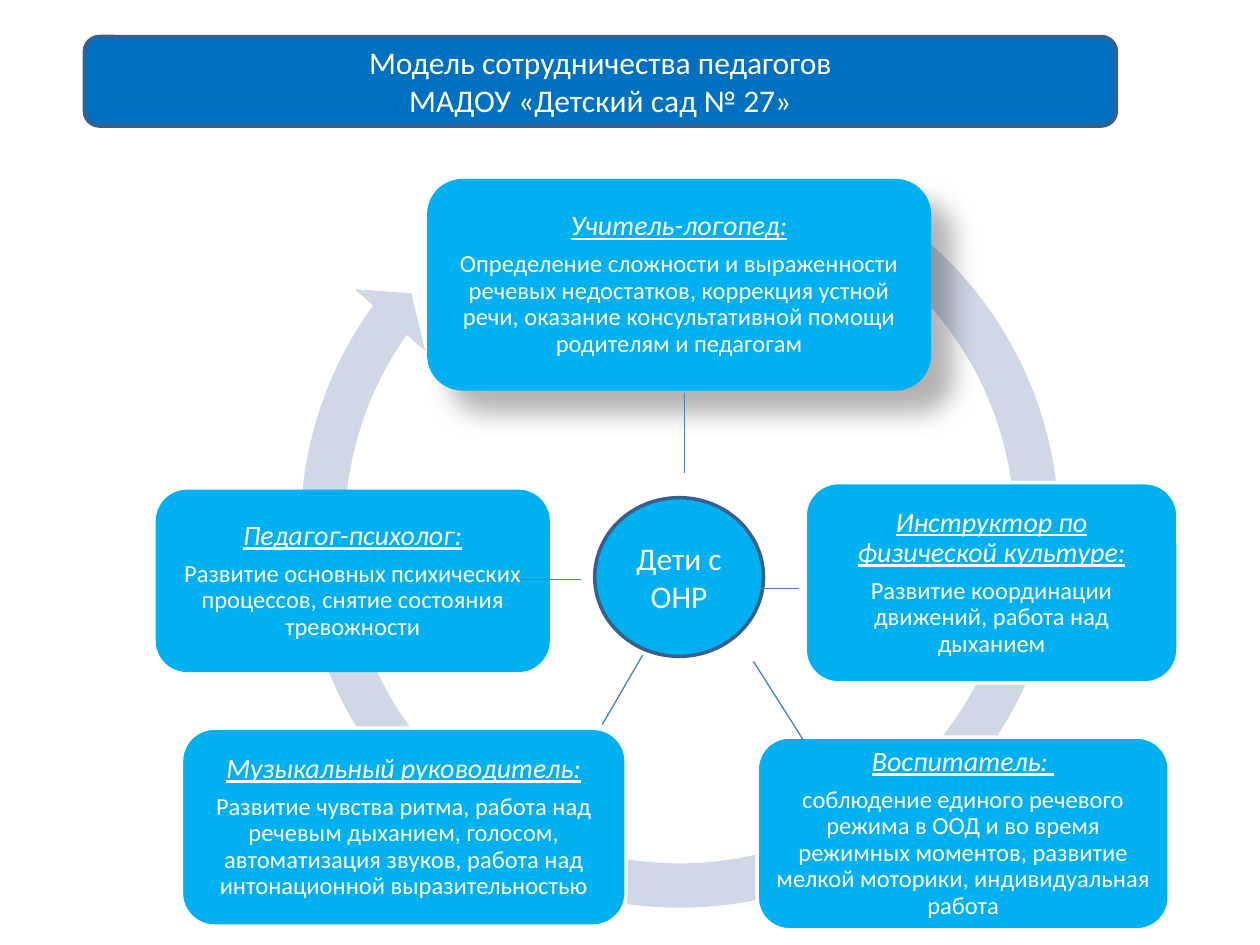
"""Build a slide showing how kindergarten teachers cooperate around the children."""
from lxml.etree import SubElement
from pptx import Presentation
from pptx.dml.color import RGBColor
from pptx.enum.shapes import MSO_CONNECTOR as Connector, MSO_SHAPE as Shape
from pptx.enum.text import MSO_ANCHOR as Anchor, PP_ALIGN as Align
from pptx.oxml.ns import qn
from pptx.util import Inches, Pt

COLORS = {
    "white": "FFFFFF",
    "ring": "D0D8E8",
    "card": "00B0F0",
    "title": "0070C0",
    "outline": "3A5F8C",
    "spoke": "4B7EBC",
    "shadow": "000000",
}
FONT = "Calibri"
TITLE = ["Модель сотрудничества педагогов", "МАДОУ «Детский сад № 27»"]
CENTER = ["Дети с ОНР"]
RING_ADJUSTMENTS = (0.055, 3.307, 129.436, 179.16, 0.058)
CARDS = [
    ("Учитель-логопед:",
     "Определение сложности и выраженности речевых недостатков, коррекция устной "
     "речи, оказание консультативной помощи родителям и педагогам",
     (3.39, 1.42, 4, 1.68), None),
    ("Инструктор по физической культуре:",
     "Развитие координации движений, работа над дыханием",
     (6.39, 3.83, 2.96, 1.59), "white"),
    ("Воспитатель: ",
     "соблюдение единого речевого режима в ООД и во время режимных моментов, "
     "развитие мелкой моторики, индивидуальная работа",
     (6.01, 5.85, 3.27, 1.53), "white"),
    ("Музыкальный руководитель:",
     "Развитие чувства ритма, работа над речевым дыханием, голосом, автоматизация "
     "звуков, работа над интонационной выразительностью",
     (1.44, 5.78, 3.53, 1.57), "white"),
    ("Педагог-психолог:",
     "Развитие основных психических процессов, снятие состояния тревожности",
     (1.25, 3.9, 3.1, 1.42), "card"),
]
SPOKES = [
    (5.43, 3.75, 5.43, 3.12),
    (6.02, 4.67, 6.34, 4.67),
    (4.61, 4.6, 4.13, 4.6),
    (5.98, 5.25, 6.38, 5.88),
    (5.1, 5.2, 4.78, 5.75),
]


def color(name):
    return RGBColor.from_string(COLORS[name])


def add_shape(slide, kind, box, fill, line=None):
    shape = slide.shapes.add_shape(kind, *map(Inches, box))
    shape.shadow.inherit = False
    shape.fill.solid()
    shape.fill.fore_color.rgb = color(fill)
    if line:
        shape.line.color.rgb = color(line)
        shape.line.width = Pt(2)
    else:
        shape.line.fill.background()
    return shape


def write(shape, lines, sizes):
    frame = shape.text_frame
    frame.word_wrap = True
    frame.vertical_anchor = Anchor.MIDDLE
    frame.text = "\n".join(lines)
    for paragraph, size in zip(frame.paragraphs, sizes):
        paragraph.alignment = Align.CENTER
        font = paragraph.runs[0].font
        font.name = FONT
        font.size = Pt(size)
        font.color.rgb = color("white")
    return frame


def add_card(slide, heading, body, box, line):
    shape = add_shape(slide, Shape.ROUNDED_RECTANGLE, box, "card", line)
    frame = write(shape, [heading, body], (16, 14))
    frame.margin_left = frame.margin_right = Inches(0.07)
    frame.margin_top = frame.margin_bottom = Inches(0.07)
    for paragraph in frame.paragraphs:
        paragraph.line_spacing = 0.9
        paragraph.space_after = Pt(5.6)
    heading_font = frame.paragraphs[0].runs[0].font
    heading_font.italic = heading_font.underline = True
    return shape


def add_shadow(shape):
    effects = shape._element.spPr.find(qn("a:effectLst"))
    shadow = SubElement(effects, qn("a:outerShdw"), blurRad=str(Pt(15)),
                        dist=str(Pt(18)), dir=str(45 * 60000), rotWithShape="0")
    tint = SubElement(shadow, qn("a:srgbClr"), val=COLORS["shadow"])
    SubElement(tint, qn("a:alpha"), val="30000")


def add_spoke(slide, ends):
    spoke = slide.shapes.add_connector(Connector.STRAIGHT, *map(Inches, ends))
    spoke.line.color.rgb = color("spoke")
    spoke.line.width = Pt(0.75)
    SubElement(spoke._element.spPr, qn("a:effectLst"))


def main():
    presentation = Presentation()
    presentation.slide_width = Inches(10)
    presentation.slide_height = Inches(7.5)
    slide = presentation.slides.add_slide(presentation.slide_layouts[6])

    ring = add_shape(slide, Shape.CIRCULAR_ARROW, (2.19, 0.99, 6.41, 6.41), "ring")
    for index, value in enumerate(RING_ADJUSTMENTS):
        ring.adjustments[index] = value

    cards = [add_card(slide, *card) for card in CARDS]
    add_shadow(cards[0])

    center = add_shape(slide, Shape.OVAL, (4.72, 3.95, 1.34, 1.26), "card", "outline")
    write(center, CENTER, (18,))
    title = add_shape(slide, Shape.ROUNDED_RECTANGLE, (0.67, 0.29, 8.19, 0.71),
                      "title", "outline")
    write(title, TITLE, (18, 18))

    for ends in SPOKES:
        add_spoke(slide, ends)
    presentation.save("out.pptx")


if __name__ == "__main__":
    main()
